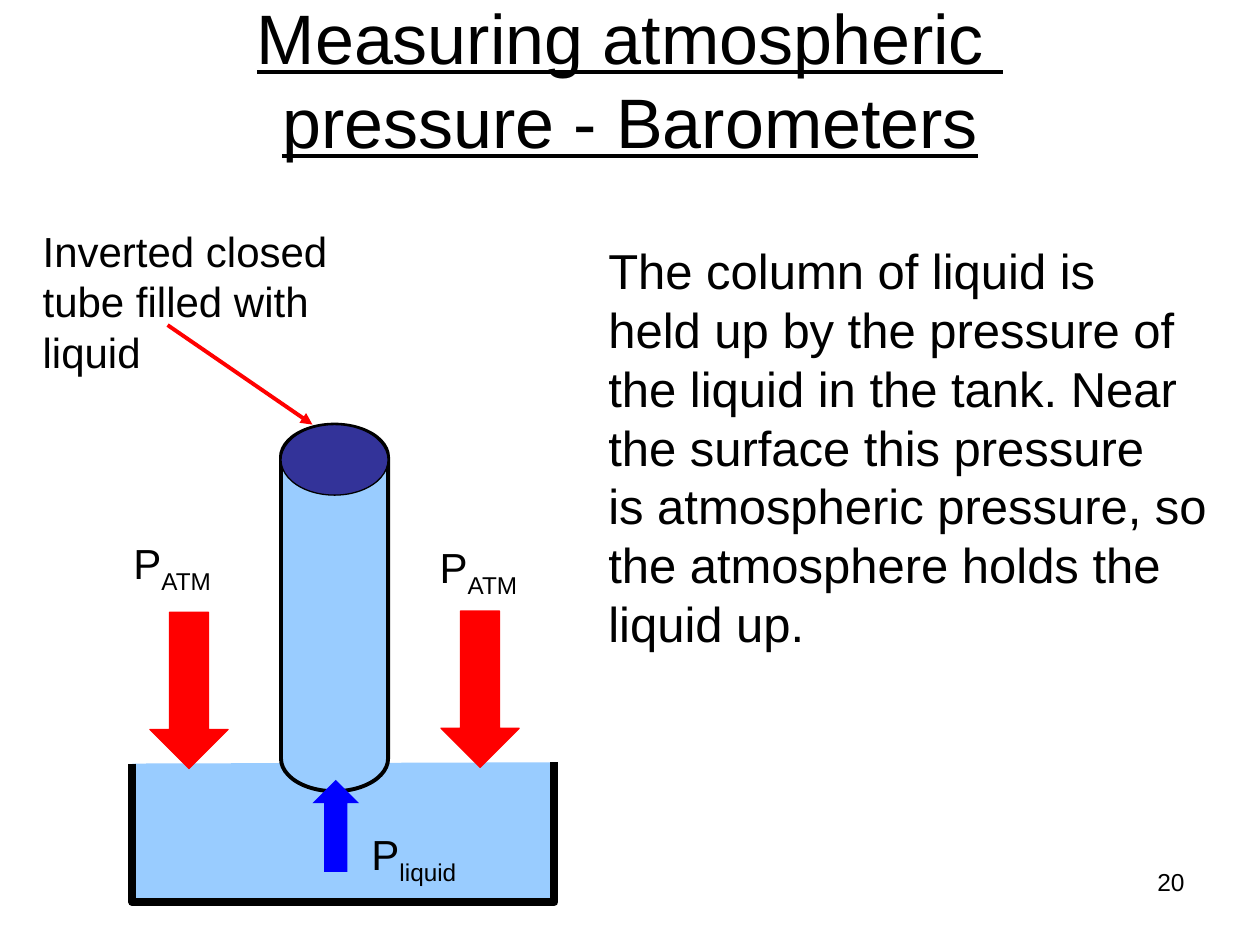
import pptx
import pptx.util
import pptx.dml.color
import pptx.enum.shapes
import pptx.enum.text
import pptx.oxml.ns
import lxml.etree

Inches = pptx.util.Inches
Pt = pptx.util.Pt
RGBColor = pptx.dml.color.RGBColor
Shape = pptx.enum.shapes.MSO_SHAPE
Align = pptx.enum.text.PP_ALIGN
Anchor = pptx.enum.text.MSO_ANCHOR

BLACK = RGBColor(0, 0, 0)
RED = RGBColor(0xFF, 0, 0)
BLUE = RGBColor(0, 0, 0xFF)
WATER = RGBColor(0x99, 0xCC, 0xFF)
TUBE_TOP = RGBColor(0x33, 0x33, 0x99)

presentation = pptx.Presentation()
presentation.slide_width = Inches(10)
presentation.slide_height = Inches(7.5)
slide = presentation.slides.add_slide(presentation.slide_layouts[6])


def add_text(text, left, top, width, height, size=24, subscript="", wrap=True,
             align=Align.LEFT, anchor=Anchor.TOP, underline=None):
    box = slide.shapes.add_textbox(Inches(left), Inches(top), Inches(width), Inches(height))
    frame = box.text_frame
    frame.word_wrap = wrap
    frame.vertical_anchor = anchor
    frame.text = text
    if subscript:
        run = frame.paragraphs[0].add_run()
        run.text = subscript
        run.font._element.set("baseline", "-25000")
    for paragraph in frame.paragraphs:
        paragraph.alignment = align
        for run in paragraph.runs:
            run.font.name = "Arial"
            run.font.size = Pt(size)
            run.font.color.rgb = BLACK
            run.font.underline = underline


def style_shape(shape, fill, line=None, line_width=0.75):
    shape.shadow.inherit = False
    shape.fill.solid()
    shape.fill.fore_color.rgb = fill
    if line is None:
        shape.line.fill.background()
    else:
        shape.line.color.rgb = line
        shape.line.width = Pt(line_width)


add_text("Measuring atmospheric \vpressure - Barometers", 0, 0, 10, 1.25, size=40,
         align=Align.CENTER, anchor=Anchor.MIDDLE, underline=True)

builder = slide.shapes.build_freeform(Inches(1.05), Inches(6.06))
builder.add_line_segments(
    [(Inches(x), Inches(y)) for x, y in [(1.05, 7.16), (4.4, 7.16), (4.4, 6.05)]], close=False)
style_shape(builder.convert_to_shape(), WATER, BLACK, 4.5)

for left, top in [(1.19, 4.86), (3.5, 4.85)]:
    arrow = slide.shapes.add_shape(Shape.DOWN_ARROW, Inches(left), Inches(top), Inches(0.62), Inches(1.24))
    style_shape(arrow, RED, RED)

for subscript, left, top, width in [("ATM", 3.39, 4.25, 0.89), ("ATM", 0.96, 4.22, 0.89),
                                    ("liquid", 2.85, 6.53, 0.94)]:
    add_text("P", left, top, width, 0.5, subscript=subscript, wrap=False)

add_text("Inverted closed\ntube filled with\nliquid", 0.24, 1.74, 2.46, 1.3)
add_text("The column of liquid is\nheld up by the pressure of\nthe liquid in the tank. Near\n"
         "the surface this pressure\nis atmospheric pressure, so\nthe atmosphere holds the\nliquid up.",
         4.73, 1.86, 4.97, 3.84, size=28, wrap=False)

tube = slide.shapes.add_shape(Shape.CAN, Inches(2.23), Inches(3.37), Inches(0.85), Inches(2.91))
tube.adjustments[0] = 0.61
style_shape(tube, WATER, BLACK, 2.25)

liquid_arrow = slide.shapes.add_shape(Shape.UP_ARROW, Inches(2.48), Inches(6.19), Inches(0.37), Inches(0.73))
style_shape(liquid_arrow, BLUE)

pointer = slide.shapes.add_connector(pptx.enum.shapes.MSO_CONNECTOR.STRAIGHT,
                                     Inches(1.33), Inches(2.58), Inches(2.48), Inches(3.37))
pointer.line.color.rgb = RED
pointer.line.width = Pt(2.25)
lxml.etree.SubElement(pointer.line._get_or_add_ln(), pptx.oxml.ns.qn("a:tailEnd"), type="triangle")
lxml.etree.SubElement(pointer._element.spPr, pptx.oxml.ns.qn("a:effectLst"))

add_text("20", 7.17, 6.83, 2.33, 0.52, size=14, align=Align.RIGHT)

tube_top = slide.shapes.add_shape(Shape.OVAL, Inches(2.23), Inches(3.37), Inches(0.85), Inches(0.56))
style_shape(tube_top, TUBE_TOP, BLACK)

presentation.save("out.pptx")
